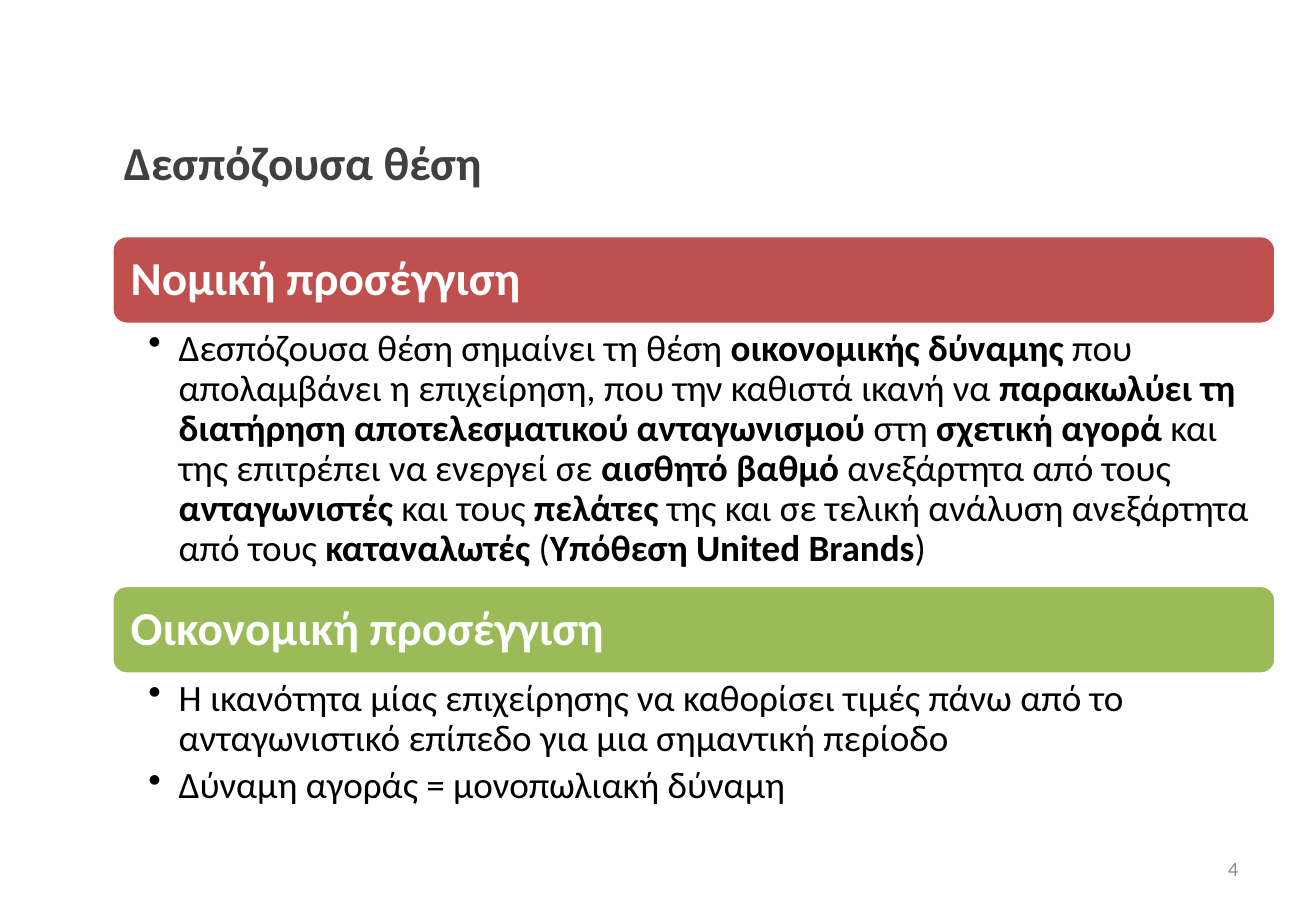
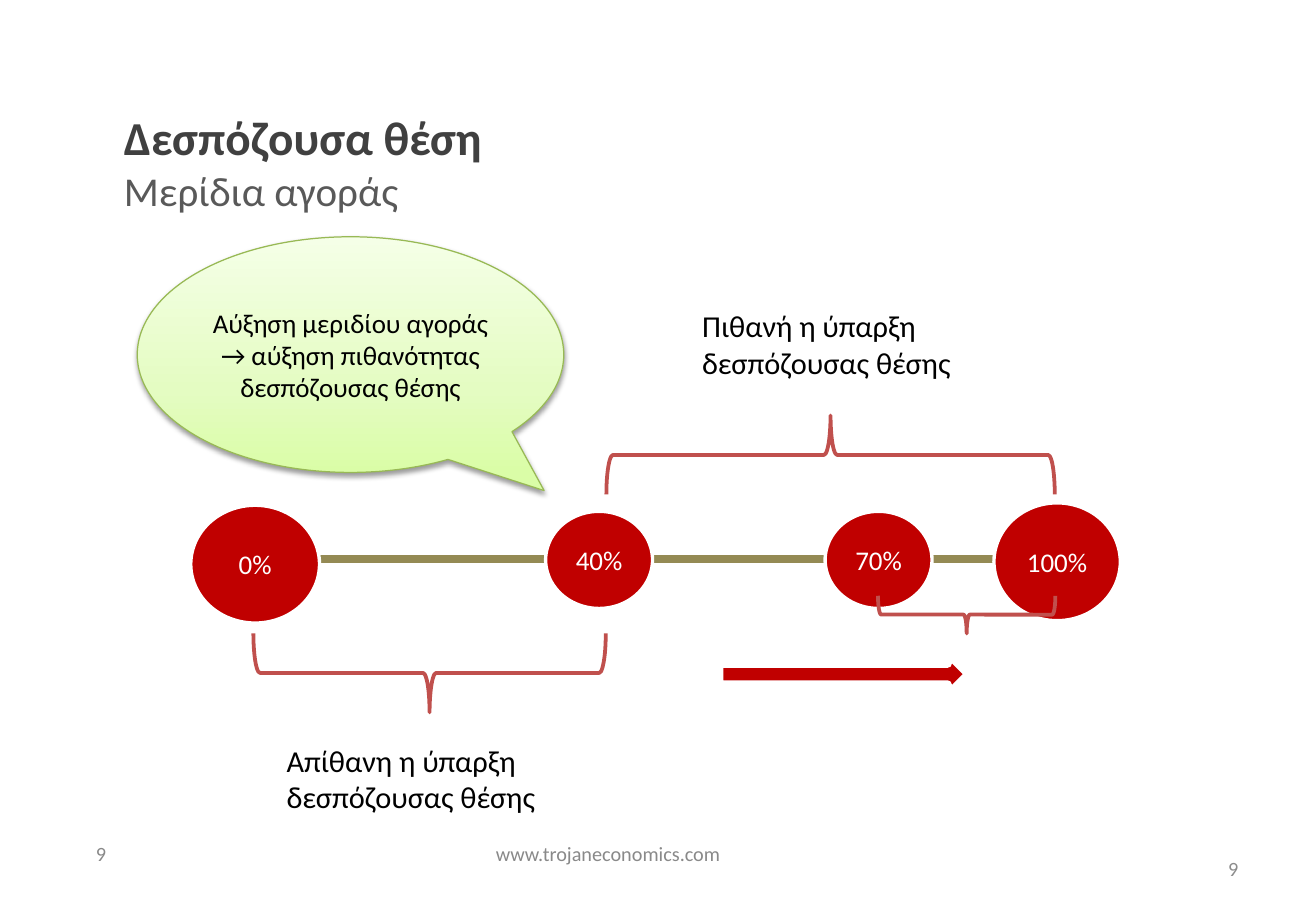
from copy import deepcopy

from lxml import etree
from pptx import Presentation
from pptx.dml.color import RGBColor
from pptx.enum.shapes import MSO_CONNECTOR, MSO_SHAPE
from pptx.enum.text import MSO_ANCHOR, MSO_AUTO_SIZE, PP_ALIGN
from pptx.oxml.ns import qn
from pptx.util import Inches, Pt

LEFT, CENTER, RIGHT = PP_ALIGN.LEFT, PP_ALIGN.CENTER, PP_ALIGN.RIGHT
MIDDLE = MSO_ANCHOR.MIDDLE
FONT = "Calibri"
WHITE, BLACK = "FFFFFF", "000000"
TITLE_GRAY, SUBTITLE_GRAY = "404040", "595959"
NUMBER_GRAY, FOOTER_GRAY = "8C8C8C", "898989"
RED, GREEN, DARK_RED, OLIVE = "C0504D", "9BBB59", "C00000", "948A54"
MARGIN, CONTENT_WIDTH = 0.92, 9.58


def color(value):
    return RGBColor.from_string(value)


def write(paragraph, text, size, hue, align=LEFT, bold=False):
    """Fill a paragraph; parts between asterisks are bold."""
    paragraph.alignment = align
    font = paragraph.font
    font.name, font.size, font.bold = FONT, Pt(size), bold
    font.color.rgb = color(hue)
    for index, part in enumerate(text.split("*")):
        if part:
            span = paragraph.add_run()
            span.text = part
            if index % 2:
                span.font.bold = True


deck = Presentation()
deck.slide_width, deck.slide_height = Inches(10.83), Inches(7.5)

# Titles and page numbers
pages = []
for number in ("4", "9"):
    page = deck.slides.add_slide(deck.slide_layouts[5])
    title = page.shapes.title
    title.left, title.top = Inches(MARGIN), Inches(0.85)
    title.width, title.height = Inches(CONTENT_WIDTH), Inches(0.96)
    title.text_frame.auto_size = MSO_AUTO_SIZE.NONE
    title.text_frame.vertical_anchor = MIDDLE
    write(title.text_frame.paragraphs[0], "Δεσπόζουσα θέση", 28, TITLE_GRAY, bold=True)

    box = page.shapes.add_textbox(Inches(7.76), Inches(6.95), Inches(2.53), Inches(0.4))
    box.text_frame.word_wrap = True
    box.text_frame.vertical_anchor = MIDDLE
    write(box.text_frame.paragraphs[0], number, 12, NUMBER_GRAY, RIGHT)
    pages.append(page)
approaches_page, shares_page = pages

# Slide 1: two approaches, each a band over its bullets
approaches = [
    ("Νομική προσέγγιση", RED, 1.94, 2.16, [
        "Δεσπόζουσα θέση σημαίνει τη θέση* οικονομικής δύναμης* που απολαμβάνει "
        "η επιχείρηση, που την καθιστά ικανή να *παρακωλύει τη διατήρηση "
        "αποτελεσματικού ανταγωνισμού* στη *σχετική αγορά* και της επιτρέπει να "
        "ενεργεί σε *αισθητό βαθμό* ανεξάρτητα από τους *ανταγωνιστές* και τους "
        "*πελάτες* της και σε τελική ανάλυση ανεξάρτητα από τους *καταναλωτές* "
        "(*Υπόθεση United Brands*)",
    ]),
    ("Οικονομική προσέγγιση", GREEN, 4.82, 1.17, [
        "Η ικανότητα μίας επιχείρησης να καθορίσει τιμές πάνω από το "
        "ανταγωνιστικό επίπεδο για μια σημαντική περίοδο",
        "Δύναμη αγοράς = μονοπωλιακή δύναμη",
    ]),
]
BAND_HEIGHT = 0.73
for heading, hue, top, height, bullets in approaches:
    band = approaches_page.shapes.add_shape(
        MSO_SHAPE.ROUNDED_RECTANGLE, Inches(MARGIN), Inches(top),
        Inches(CONTENT_WIDTH), Inches(BAND_HEIGHT))
    band.shadow.inherit = False
    band.fill.solid()
    band.fill.fore_color.rgb = color(hue)
    band.line.color.rgb = color(WHITE)
    band.line.width = Pt(2)
    frame = band.text_frame
    frame.vertical_anchor = MIDDLE
    frame.margin_left = frame.margin_right = Inches(0.12)
    frame.margin_top = frame.margin_bottom = Inches(0.12)
    frame.paragraphs[0].line_spacing = 0.9
    write(frame.paragraphs[0], heading, 28, WHITE, bold=True)

    box = approaches_page.shapes.add_textbox(
        Inches(MARGIN), Inches(top + BAND_HEIGHT), Inches(CONTENT_WIDTH), Inches(height))
    frame = box.text_frame
    frame.word_wrap = True
    frame.margin_left, frame.margin_right = Inches(0.3), Inches(0.22)
    frame.margin_top = frame.margin_bottom = Inches(0.04)
    for index, bullet in enumerate(bullets):
        para = frame.add_paragraph() if index else frame.paragraphs[0]
        properties = para._p.get_or_add_pPr()
        properties.set("marL", str(Inches(0.25)))
        properties.set("indent", str(-Inches(0.25)))
        etree.SubElement(properties, qn("a:buChar")).set("char", "•")
        para.line_spacing = 0.9
        para.space_after = Pt(4.4)
        write(para, bullet, 22, BLACK)

# Slide 2: subtitle
para = shares_page.shapes.title.text_frame.paragraphs[0]
para.add_line_break()
span = para.add_run()
span.text = "Μερίδια αγοράς"
span.font.size, span.font.bold = Pt(24.3), False
span.font.color.rgb = color(SUBTITLE_GRAY)

# Footer and labels
for text, left, top, width, height, size, hue, align in [
    ("9", 0.69, 6.83, 0.84, 0.4, 12, FOOTER_GRAY, LEFT),
    ("www.trojaneconomics.com", 3.32, 6.83, 3.37, 0.4, 12, FOOTER_GRAY, CENTER),
    ("Απίθανη η ύπαρξη δεσπόζουσας θέσης", 2.26, 6.06, 2.67, 0.7, 18, BLACK, LEFT),
    ("Πιθανή η ύπαρξη δεσπόζουσας θέσης", 5.68, 2.48, 2.67, 0.7, 18, BLACK, LEFT),
]:
    box = shares_page.shapes.add_textbox(
        Inches(left), Inches(top), Inches(width), Inches(height))
    box.text_frame.word_wrap = True
    box.text_frame.vertical_anchor = MIDDLE
    write(box.text_frame.paragraphs[0], text, size, hue, align)

# Market share axis
axis = shares_page.shapes.add_connector(
    MSO_CONNECTOR.STRAIGHT, Inches(2.34), Inches(4.6), Inches(8.47), Inches(4.6))
axis.line.color.rgb = color(OLIVE)
axis.line.width = Pt(4.5)
etree.SubElement(axis._element.spPr, qn("a:effectLst"))

# Share marks and the arrow
for kind, text, left, top, width, height, outline in [
    (MSO_SHAPE.OVAL, "0%", 1.57, 4.16, 1.06, 0.97, 2),
    (MSO_SHAPE.OVAL, "40%", 4.49, 4.21, 0.88, 0.8, 2),
    (MSO_SHAPE.OVAL, "70%", 6.79, 4.21, 0.88, 0.8, 2),
    (MSO_SHAPE.OVAL, "100%", 8.18, 4.14, 1.04, 0.97, 2),
    (MSO_SHAPE.RIGHT_ARROW, "", 5.92, 5.38, 2.05, 0.34, 4.75),
]:
    mark = shares_page.shapes.add_shape(
        kind, Inches(left), Inches(top), Inches(width), Inches(height))
    mark.shadow.inherit = False
    mark.fill.solid()
    mark.fill.fore_color.rgb = color(DARK_RED)
    mark.line.color.rgb = color(WHITE)
    mark.line.width = Pt(outline)
    if text:
        mark.text_frame.vertical_anchor = MIDDLE
        write(mark.text_frame.paragraphs[0], text, 16, WHITE, CENTER)

# Braces over the share ranges
for left, top, width, height, rotation in [
    (3.21, 4.09, 0.65, 2.9, 90),
    (6.51, 1.9, 0.65, 3.69, 270),
    (7.8, 4.33, 0.31, 1.46, 90),
]:
    brace = shares_page.shapes.add_shape(
        MSO_SHAPE.RIGHT_BRACE, Inches(left), Inches(top), Inches(width), Inches(height))
    brace.rotation = rotation
    brace.shadow.inherit = False
    brace.fill.background()
    brace.line.color.rgb = color(RED)
    brace.line.width = Pt(2.25)

# Callout with gradient and soft shadow
callout = shares_page.shapes.add_shape(
    MSO_SHAPE.OVAL_CALLOUT, Inches(1.13), Inches(1.95), Inches(3.51), Inches(1.94))
callout.adjustments[0], callout.adjustments[1] = 0.454, 0.577
callout.line.color.rgb = color("98B955")
callout.line.width = Pt(0.75)
callout.fill.gradient()
callout.fill.gradient_angle = 90
stop_list = next(callout._element.spPr.iter(qn("a:gsLst")))
stop_list.append(deepcopy(stop_list[0]))
stops = [(0, "DAFDA7"), (0.35, "E4FCC2"), (1, "F5FFE7")]
for stop, (position, hue) in zip(callout.fill.gradient_stops, stops):
    stop.position = position
    stop.color.rgb = color(hue)

callout.shadow.inherit = False
effects = callout._element.spPr.find(qn("a:effectLst"))
shadow = etree.SubElement(effects, qn("a:outerShdw"), {
    "blurRad": str(Pt(3.1)), "dist": str(Pt(1.6)), "dir": "5400000", "rotWithShape": "0"})
shade = etree.SubElement(shadow, qn("a:srgbClr"), val=BLACK)
etree.SubElement(shade, qn("a:alpha"), val="38000")

callout.text_frame.vertical_anchor = MIDDLE
write(callout.text_frame.paragraphs[0],
      "Αύξηση μεριδίου αγοράς → αύξηση πιθανότητας δεσπόζουσας θέσης",
      16, BLACK, CENTER)

deck.save("out.pptx")
